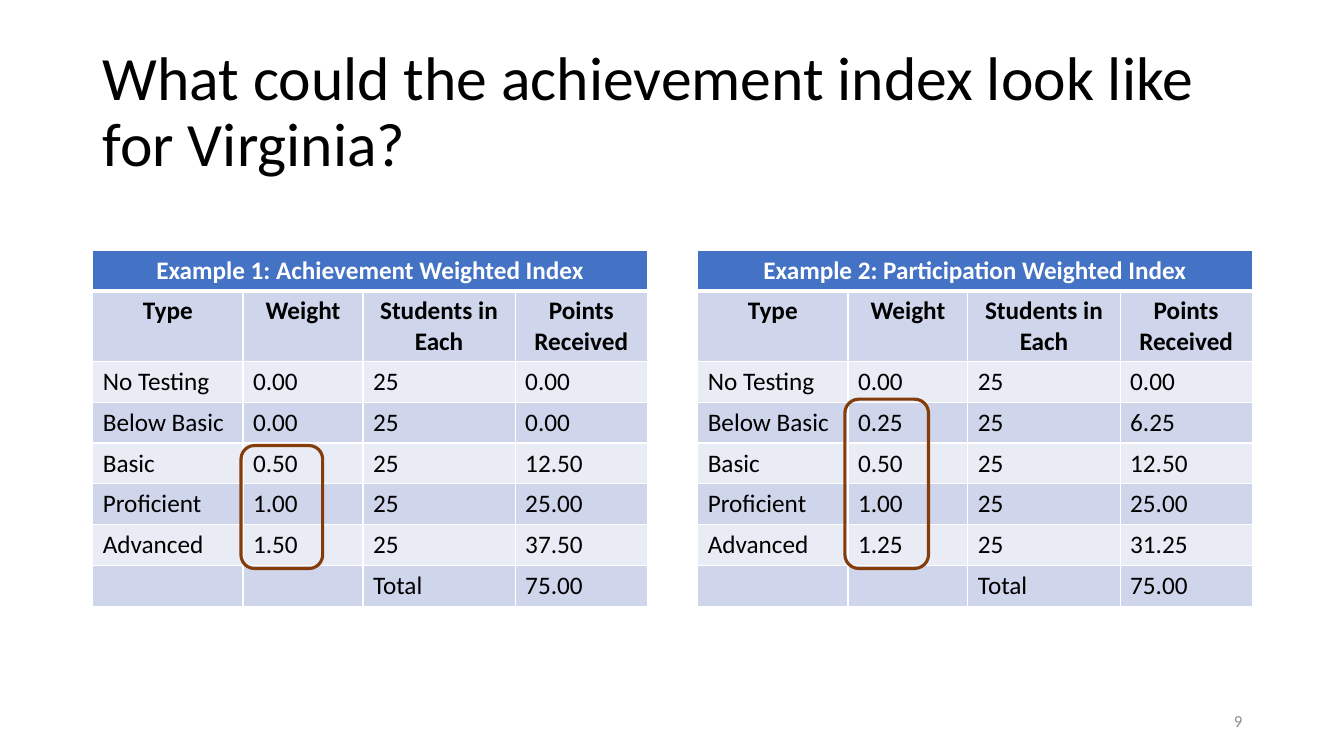
"""Builds a slide that compares two achievement index examples."""
from lxml import etree
from pptx import Presentation
from pptx.dml.color import RGBColor
from pptx.enum.shapes import MSO_SHAPE
from pptx.enum.text import MSO_ANCHOR, PP_ALIGN
from pptx.oxml.ns import qn
from pptx.util import Inches, Pt

LEFT, CENTER, RIGHT = PP_ALIGN.LEFT, PP_ALIGN.CENTER, PP_ALIGN.RIGHT
MIDDLE = MSO_ANCHOR.MIDDLE
ROUND = MSO_SHAPE.ROUNDED_RECTANGLE
BLACK = RGBColor(0x00, 0x00, 0x00)
WHITE = RGBColor(0xFF, 0xFF, 0xFF)
GRAY = RGBColor(0x8C, 0x8C, 0x8C)
BLUE = RGBColor(0x44, 0x72, 0xC4)
DARK = RGBColor(0xCF, 0xD5, 0xEA)
LIGHT = RGBColor(0xE9, 0xEB, 0xF5)
BROWN = RGBColor(0x84, 0x3C, 0x0B)

WIDTHS = [1.49, 1.19, 1.51, 1.31]
HEADS = ["Type", "Weight", "Students in Each", "Points Received"]
TYPES = ["No Testing", "Below Basic", "Basic", "Proficient", "Advanced"]
COUNT = 25
TABLES = [
    (0.92, "Example 1: Achievement Weighted Index", [0, 0, 0.5, 1, 1.5]),
    (6.92, "Example 2: Participation Weighted Index", [0, 0.25, 0.5, 1, 1.25]),
]
MARKS = [(2.39, 4.42, 0.81, 1.22), (8.38, 3.96, 0.83, 1.68)]


class Deck:
    def __init__(self):
        self.font = "Calibri"
        self.show = Presentation()
        self.show.slide_width = Inches(13.33)
        self.show.slide_height = Inches(7.5)
        self.slide = self.show.slides.add_slide(self.show.slide_layouts[6])

    def style(self, frame, text, size, color, align=LEFT, bold=False):
        frame.text = text
        para = frame.paragraphs[0]
        para.alignment = align
        font = para.runs[0].font if para.runs else para.font
        font.name, font.size, font.bold = self.font, Pt(size), bold
        font.color.rgb = color
        return para

    def text(self, box, text, size, color, align=LEFT):
        frame = self.slide.shapes.add_textbox(*map(Inches, box)).text_frame
        frame.word_wrap = True
        frame.vertical_anchor = MIDDLE
        return self.style(frame, text, size, color, align)

    def border(self, cell, base):
        props = cell._tc.get_or_add_tcPr()
        for side, width in zip("LRTB", (1, 1, 1, base)):
            line = etree.SubElement(props, qn("a:ln" + side), w=str(Pt(width)))
            fill = etree.SubElement(line, qn("a:solidFill"))
            etree.SubElement(fill, qn("a:srgbClr"), val=str(WHITE))

    def table(self, left, rows):
        box = map(Inches, (left, 2.48, sum(WIDTHS), 3.24))
        table = self.slide.shapes.add_table(len(rows), len(WIDTHS), *box).table
        for col, width in zip(table.columns, WIDTHS):
            col.width = Inches(width)
        for i, row in enumerate(rows):
            for j, text in enumerate(row):
                cell = table.cell(i, j)
                self.border(cell, 3 if i == 0 else 1)
                cell.fill.solid()
                cell.fill.fore_color.rgb = BLUE if i == 0 else DARK if i % 2 else LIGHT
                self.style(cell.text_frame, text, 18, BLACK if i else WHITE,
                           CENTER if i < 2 else LEFT, i < 2)
        table.cell(0, 0).merge(table.cell(0, len(WIDTHS) - 1))

    def mark(self, box):
        shape = self.slide.shapes.add_shape(ROUND, *map(Inches, box))
        shape.shadow.inherit = False
        shape.fill.background()
        shape.line.color.rgb = BROWN
        shape.line.width = Pt(2.25)


def main():
    deck = Deck()
    title = deck.text((0.92, 0.4, 11.5, 1.45),
                      "What could the achievement index look like for Virginia?",
                      44, BLACK)
    title.line_spacing = 0.9
    deck.text((9.42, 6.95, 3, 0.4), "9", 12, GRAY, RIGHT)
    for left, name, weights in TABLES:
        points = [weight * COUNT for weight in weights]
        rows = [[name, "", "", ""], HEADS]
        for kind, weight, point in zip(TYPES, weights, points):
            rows.append([kind, f"{weight:.2f}", str(COUNT), f"{point:.2f}"])
        rows.append(["", "", "Total", f"{sum(points):.2f}"])
        deck.table(left, rows)
    for box in MARKS:
        deck.mark(box)
    deck.show.save("out.pptx")


if __name__ == "__main__":
    main()
